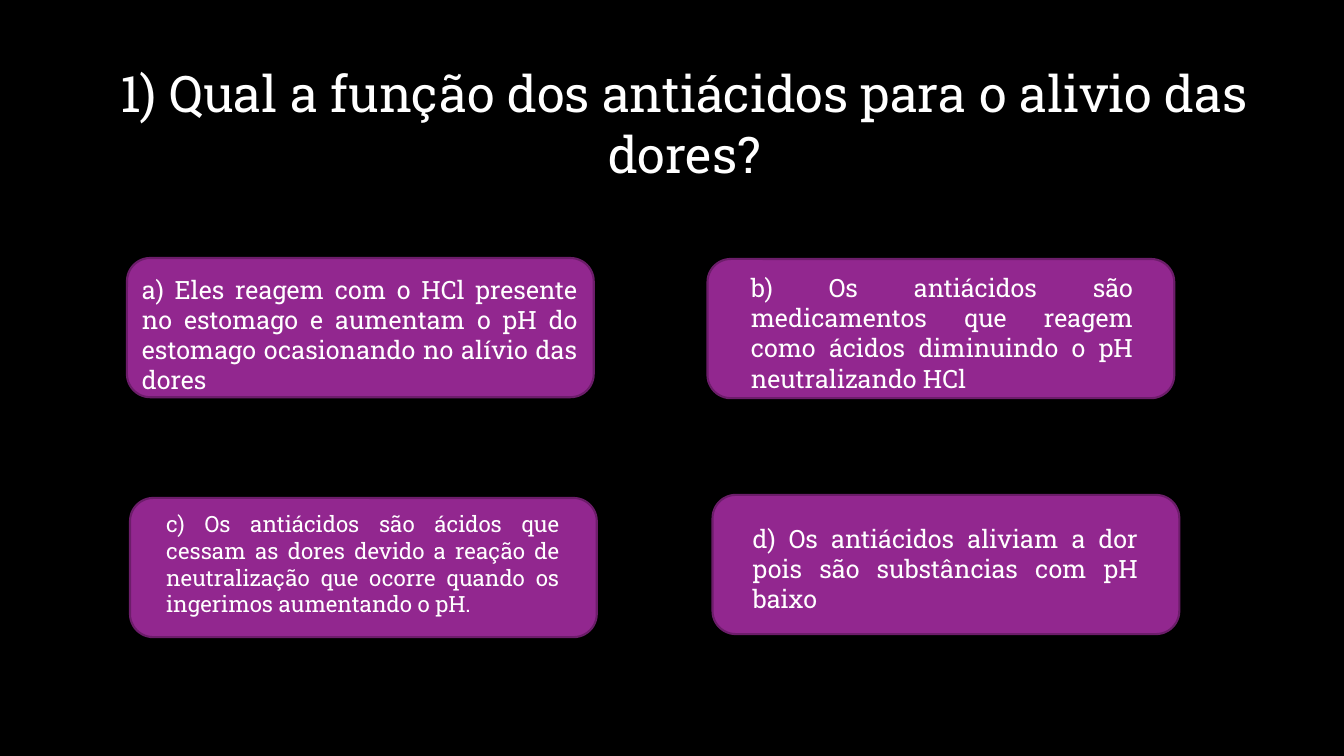
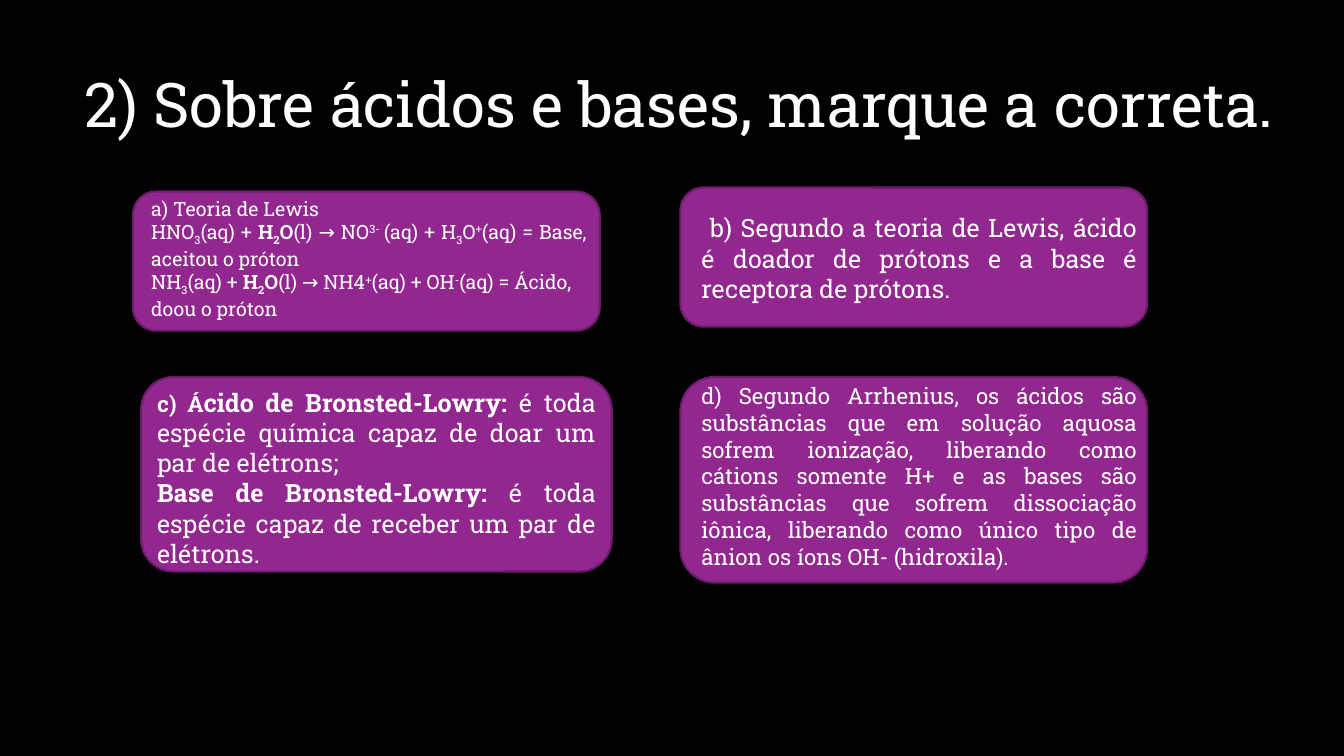
import pptx
import pptx.util
import pptx.dml.color
import pptx.enum.shapes
import pptx.enum.text

Pt = pptx.util.Pt
ALIGN = pptx.enum.text.PP_ALIGN

COLORS = {"background": "000000", "card": "92278F", "border": "6C1D6A", "text": "FFFFFF"}
FONT = "Roboto Slab"
CARD = (333.4, 99.4)
BOLD = {"bold": True}
SUB = {"baseline": -25000}
SUP = {"baseline": 30000}
WATER = [("H", BOLD), ("2", SUB), ("O", {})]

LEWIS_BASE = [("HNO", {}), ("3", SUB), ("(aq) + ", {}), *WATER, ("(l) → NO", {}), ("3- ", SUP),
              ("(aq) + H", {}), ("3", SUB), ("O", {}), ("+", SUP), ("(aq) = Base, aceitou o próton", {})]
LEWIS_ACID = [("NH", {}), ("3", SUB), ("(aq) + ", {}), *WATER, ("(l) → NH4", {}), ("+", SUP),
              ("(aq) + OH", {}), ("-", SUP), ("(aq) = Ácido, doou o próton", {})]
LEWIS_BASE[4] = LEWIS_ACID[4] = ("2", {**BOLD, **SUB})
LEWIS_BASE[3] = LEWIS_ACID[3] = ("H", BOLD)
LEWIS_BASE[5] = LEWIS_ACID[5] = ("O", BOLD)
BRONSTED_ACID = [("c) Á", {"bold": True, "size": 16}), ("cido de Bronsted-Lowry:", BOLD),
                 (" é toda espécie química capaz de doar um par de elétrons;", {})]
BRONSTED_BASE = [("Base de Bronsted-Lowry:", BOLD),
                 (" é toda espécie capaz de receber um par de elétrons.", {})]

QUESTIONS = [
    {
        "title": "1) Qual a função dos antiácidos para o alivio das dores?",
        "place": (41.8, 41, 894.2, 94.3), "size": 36, "wrap": True,
        "answers": [
            ((90.7, 184.3, *CARD), (94.3, 192.2, 325.4, 94.3), 18,
             ["a) Eles reagem com o HCl presente no estomago e aumentam o pH do estomago "
              "ocasionando no alívio das dores"]),
            ((505.4, 185, *CARD), (529.2, 190.8, 287.3, 94.3), 18,
             ["b) Os antiácidos são medicamentos que reagem como ácidos diminuindo o pH "
              "neutralizando HCl"]),
            ((92.9, 355.7, *CARD), (111.6, 360.7, 295.2, 85), 16,
             ["c) Os antiácidos são ácidos que cessam as dores devido a reação de "
              "neutralização que ocorre quando os ingerimos aumentando o pH."]),
            ((509, 353.5, *CARD), (530.6, 370.1, 289.4, 72.7), 18,
             ["d) Os antiácidos aliviam a dor pois são substâncias com pH baixo"]),
        ],
    },
    {
        "title": "2) Sobre ácidos e bases, marque a correta.",
        "place": (46.1, 43.9, 879.8, 60.5), "size": 44, "wrap": False,
        "answers": [
            ((95, 136.8, *CARD), (100.8, 136.8, 325.4, 92.2), 14,
             ["a) Teoria de Lewis", LEWIS_BASE, LEWIS_ACID]),
            ((486, 133.9, *CARD), (493.9, 148.3, 325.4, 72.7), 18,
             [" b) Segundo a teoria de Lewis, ácido é doador de prótons e a base é "
              "receptora de prótons."]),
            ((100.8, 269.3, 336.2, 139), (105.1, 272.9, 327.6, 138.2), 18,
             [BRONSTED_ACID, BRONSTED_BASE]),
            ((486, 269.3, 333.4, 146.9), (493.9, 269.3, 325.4, 143.3), 16,
             ["d) Segundo Arrhenius, os ácidos são substâncias que em solução aquosa "
              "sofrem ionização, liberando como cátions somente H+ e as bases são "
              "substâncias que sofrem dissociação iônica, liberando como único tipo de "
              "ânion os íons OH- (hidroxila)."]),
        ],
    },
]


def rgb(name):
    return pptx.dml.color.RGBColor.from_string(COLORS[name])


def points(place):
    return [Pt(v) for v in place]


def add_text(s, place, paragraphs, size, align, wrap=True):
    tf = s.shapes.add_textbox(*points(place)).text_frame
    tf.word_wrap = wrap
    tf.auto_size = pptx.enum.text.MSO_AUTO_SIZE.SHAPE_TO_FIT_TEXT
    for i, runs in enumerate(paragraphs):
        p = tf.add_paragraph() if i else tf.paragraphs[0]
        p.alignment = ALIGN.LEFT if runs is LEWIS_ACID else align
        p.font.name = FONT
        p.font.size = Pt(size)
        p.font.color.rgb = rgb("text")
        for text, style in [(runs, {})] if isinstance(runs, str) else runs:
            r = p.add_run()
            r.text = text
            if "bold" in style:
                r.font.bold = True
            if "size" in style:
                r.font.size = Pt(style["size"])
            if "baseline" in style:
                r._r.get_or_add_rPr().set("baseline", str(style["baseline"]))


def add_card(s, place):
    sp = s.shapes.add_shape(pptx.enum.shapes.MSO_SHAPE.ROUNDED_RECTANGLE, *points(place))
    sp.shadow.inherit = False
    sp.fill.solid()
    sp.fill.fore_color.rgb = rgb("card")
    sp.line.color.rgb = rgb("border")
    sp.line.width = Pt(1.5)


def add_question(prs, question):
    s = prs.slides.add_slide(prs.slide_layouts[6])
    s.background.fill.solid()
    s.background.fill.fore_color.rgb = rgb("background")
    add_text(s, question["place"], [question["title"]], question["size"], ALIGN.CENTER, question["wrap"])
    for card, place, size, paragraphs in question["answers"]:
        add_card(s, card)
        add_text(s, place, paragraphs, size, ALIGN.JUSTIFY)


def main():
    prs = pptx.Presentation()
    prs.slide_width, prs.slide_height = Pt(960), Pt(540)
    for question in QUESTIONS:
        add_question(prs, question)
    prs.save("out.pptx")


if __name__ == "__main__":
    main()
